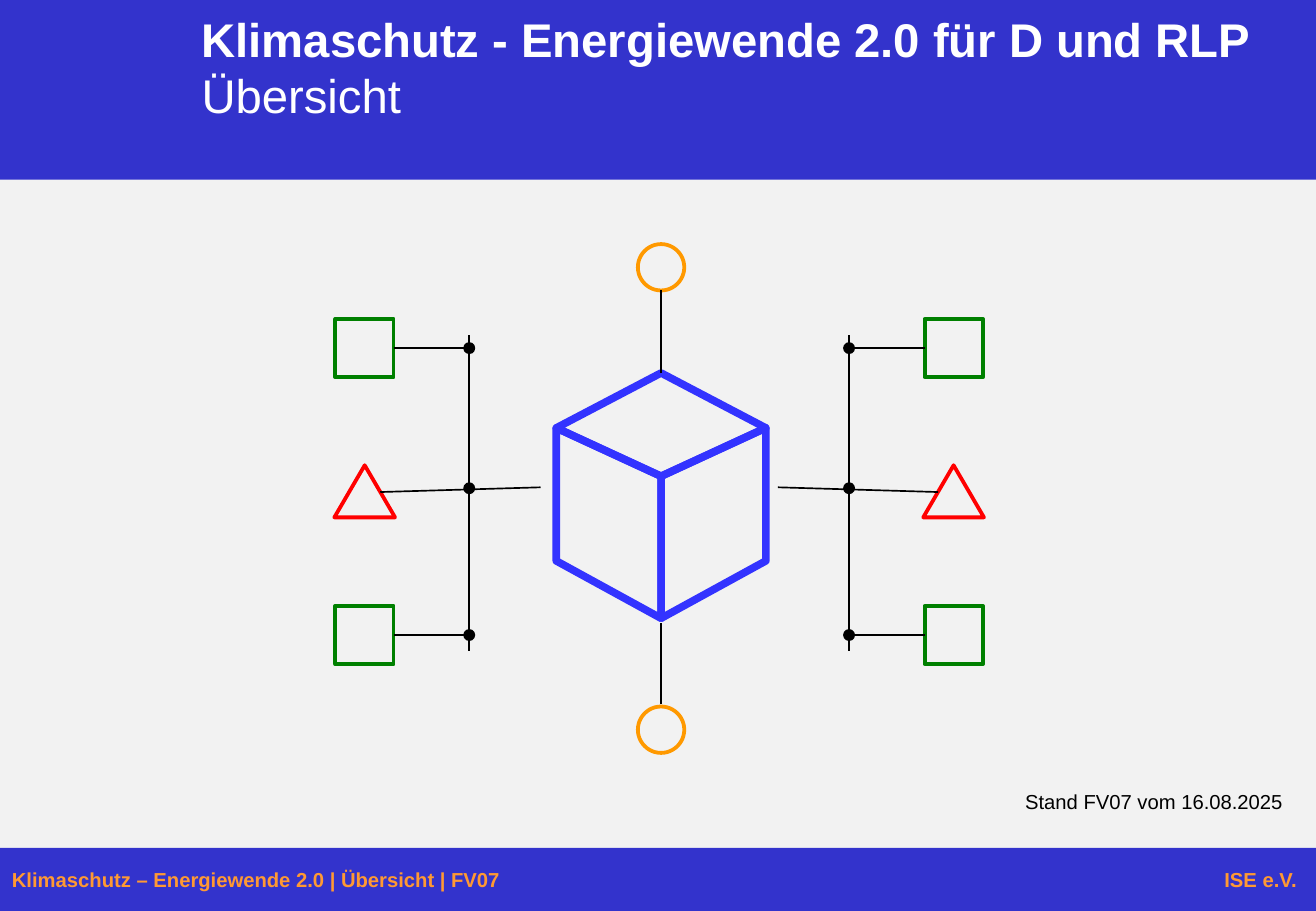
from dataclasses import dataclass

from lxml.etree import SubElement
from pptx import Presentation
from pptx.dml.color import RGBColor
from pptx.enum.shapes import MSO_CONNECTOR, MSO_SHAPE
from pptx.enum.text import MSO_ANCHOR, PP_ALIGN
from pptx.oxml.ns import qn
from pptx.util import Cm, Pt

COLORS = {
    "band": "3333CC", "ground": "F2F2F2", "title": "FFFFFF",
    "footer": "FF9933", "cube": "3333FF", "circle": "FF9900",
    "square": "008000", "triangle": "FF0000", "ink": "000000",
}
WIDTH, HEIGHT = 27.51, 19.05
MIRROR_X = 13.78
CUBE_X = 13.82
SPINE_X = 17.75
SQUARE = 1.22
DOT = 0.25
CIRCLE = 0.97


@dataclass(frozen=True)
class Area:
    left: float
    top: float
    width: float
    height: float

    def emu(self):
        return Cm(self.left), Cm(self.top), Cm(self.width), Cm(self.height)

    def mirrored(self):
        return Area(2 * MIRROR_X - self.left - self.width, self.top, self.width, self.height)


@dataclass(frozen=True)
class Segment:
    x1: float
    y1: float
    x2: float
    y2: float

    def mirrored(self):
        return Segment(2 * MIRROR_X - self.x1, self.y1, 2 * MIRROR_X - self.x2, self.y2)


def rgb(name: str) -> RGBColor:
    return RGBColor.from_string(COLORS[name])


def centered(x: float, y: float, size: float) -> Area:
    return Area(x - size / 2, y - size / 2, size, size)


def add_filled(slide, kind, area: Area, color: str):
    shape = slide.shapes.add_shape(kind, *area.emu())
    shape.shadow.inherit = False
    shape.fill.solid()
    shape.fill.fore_color.rgb = rgb(color)
    shape.line.fill.background()
    return shape


def set_outline(shape, color: str, width: float) -> None:
    shape.shadow.inherit = False
    shape.fill.background()
    shape.line.color.rgb = rgb(color)
    shape.line.width = Pt(width)
    SubElement(shape.line._get_or_add_ln(), qn("a:round"))


def add_outlined(slide, kind, area: Area, color: str):
    shape = slide.shapes.add_shape(kind, *area.emu())
    set_outline(shape, color, 2.25)
    return shape


def add_line(slide, segment: Segment):
    line = slide.shapes.add_connector(
        MSO_CONNECTOR.STRAIGHT, Cm(segment.x1), Cm(segment.y1), Cm(segment.x2), Cm(segment.y2))
    line.line.color.rgb = rgb("ink")
    line.line.width = Pt(1)
    SubElement(line._element.spPr, qn("a:effectLst"))
    return line


def add_run(paragraph, text: str, size: float, color: str, bold: bool) -> None:
    run = paragraph.add_run()
    run.text = text
    run.font.name = "Arial"
    run.font.size = Pt(size)
    run.font.bold = bold
    run.font.color.rgb = rgb(color)


def add_title(slide) -> None:
    title = slide.shapes.title
    title.left, title.top, title.width, title.height = Area(3.96, 0.08, 23.11, 2.64).emu()
    title.text_frame.vertical_anchor = MSO_ANCHOR.TOP
    heading = title.text_frame.paragraphs[0]
    heading.alignment = PP_ALIGN.LEFT
    add_run(heading, "Klimaschutz - Energiewende 2.0 für D und RLP", 28, "title", True)
    heading.add_line_break()
    add_run(heading, "Übersicht", 28, "title", False)
    slide.shapes[-1].element.addnext(title.element)


def add_footer(slide) -> None:
    footer = slide.shapes.add_textbox(*Area(0, 18.01, WIDTH, 0.76).emu())
    footer.text_frame.word_wrap = True
    line = footer.text_frame.paragraphs[0]
    tabs = SubElement(line._p.get_or_add_pPr(), qn("a:tabLst"))
    SubElement(tabs, qn("a:tab"), pos=str(Cm(26.86)), algn="r")
    add_run(line, "Klimaschutz – Energiewende 2.0 | Übersicht | FV07", 12, "footer", True)
    add_run(line, "\tISE e.V.", 12, "footer", True)


def add_status(slide) -> None:
    status = slide.shapes.add_textbox(*Area(21.13, 16.38, 5.94, 0.76).emu())
    status.text_frame.word_wrap = False
    line = status.text_frame.paragraphs[0]
    line.alignment = PP_ALIGN.RIGHT
    add_run(line, "Stand FV07 vom 16.08.2025", 12, "ink", False)


def add_cube(slide) -> None:
    top, front, bottom = (CUBE_X, 7.8), (CUBE_X, 9.96), (CUBE_X, 12.93)
    left, right = (11.63, 8.95), (16.01, 8.95)
    left_foot, right_foot = (11.63, 11.73), (16.01, 11.73)
    faces = [
        (left, front, bottom, left_foot),
        (right, front, bottom, right_foot),
        (left, top, right, front),
    ]
    for face in faces:
        start, *corners = [(Cm(x), Cm(y)) for x, y in face]
        builder = slide.shapes.build_freeform(*start)
        builder.add_line_segments(corners, close=True)
        set_outline(builder.convert_to_shape(), "cube", 4.5)


def add_poles(slide) -> None:
    for center_y in (5.59, 15.26):
        add_outlined(slide, MSO_SHAPE.OVAL, centered(CUBE_X, center_y, CIRCLE), "circle")
    for start, end in ((7.8, 6.07), (14.73, 13.02)):
        add_line(slide, Segment(CUBE_X, start, CUBE_X, end))


def add_wing(slide, is_left: bool) -> None:
    def place(part):
        return part.mirrored() if is_left else part

    inner_side = 3 if is_left else 1
    triangle = Area(19.3, 9.73, 1.27, 1.09)
    add_outlined(slide, MSO_SHAPE.ISOSCELES_TRIANGLE, place(triangle), "triangle")
    add_line(slide, place(Segment(16.26, 10.19, 19.61, 10.29)))
    add_line(slide, place(Segment(SPINE_X, 13.61, SPINE_X, 7.01)))
    for branch_y in (7.28, 13.28):
        square = add_outlined(
            slide, MSO_SHAPE.RECTANGLE, place(centered(19.94, branch_y, SQUARE)), "square")
        branch = add_line(slide, place(Segment(SPINE_X, branch_y, 19.33, branch_y)))
        branch.end_connect(square, inner_side)
    for dot_y in (7.28, 10.21, 13.28):
        add_filled(slide, MSO_SHAPE.OVAL, place(centered(SPINE_X, dot_y, DOT)), "ink")


def main() -> None:
    deck = Presentation()
    deck.slide_width, deck.slide_height = Cm(WIDTH), Cm(HEIGHT)
    slide = deck.slides.add_slide(deck.slide_layouts[5])
    bands = [
        (Area(0, 3.73, WIDTH, 14), "ground"),
        (Area(0, 17.73, WIDTH, 1.32), "band"),
        (Area(0, 0, WIDTH, 3.76), "band"),
    ]
    for area, color in bands:
        add_filled(slide, MSO_SHAPE.RECTANGLE, area, color)
    add_title(slide)
    add_footer(slide)
    add_cube(slide)
    add_poles(slide)
    for is_left in (False, True):
        add_wing(slide, is_left)
    add_status(slide)
    deck.save("out.pptx")


if __name__ == "__main__":
    main()
